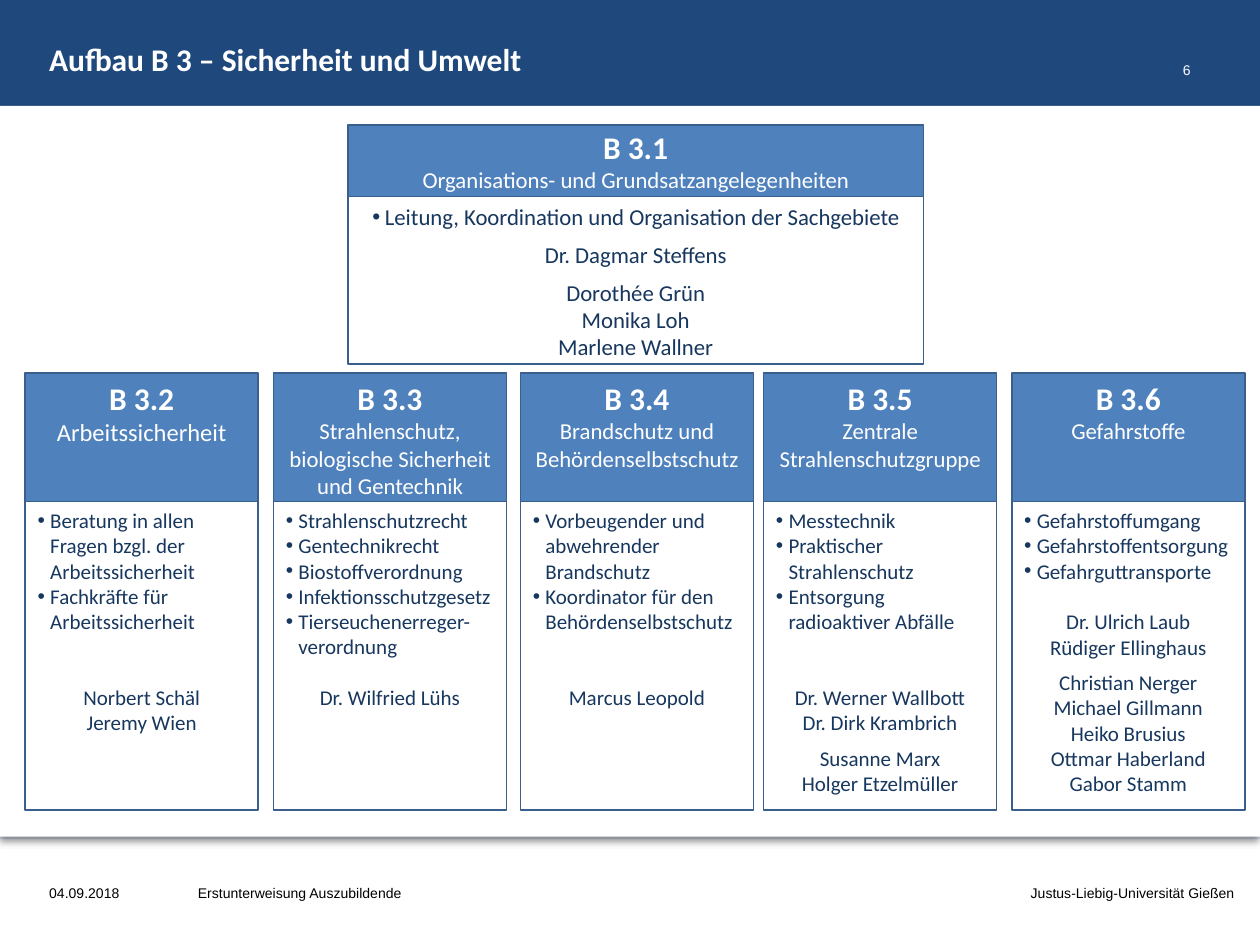
from dataclasses import dataclass

from lxml import etree
from pptx import Presentation
from pptx.dml.color import RGBColor
from pptx.enum.shapes import MSO_SHAPE
from pptx.enum.text import MSO_ANCHOR, MSO_AUTO_SIZE, PP_ALIGN
from pptx.oxml.ns import qn
from pptx.util import Inches, Pt

RECT = MSO_SHAPE.RECTANGLE
TOP, MIDDLE, BOTTOM = MSO_ANCHOR.TOP, MSO_ANCHOR.MIDDLE, MSO_ANCHOR.BOTTOM
LEFT, CENTER, RIGHT = PP_ALIGN.LEFT, PP_ALIGN.CENTER, PP_ALIGN.RIGHT

NAVY = RGBColor(0x1F, 0x49, 0x7D)
BLUE = RGBColor(0x4F, 0x81, 0xBD)
EDGE = RGBColor(0x3A, 0x5F, 0x8C)
PALE = RGBColor(0xDC, 0xE6, 0xF2)
INK = RGBColor(0x17, 0x37, 0x5E)
WHITE = RGBColor(0xFF, 0xFF, 0xFF)
BLACK = RGBColor(0, 0, 0)

ROW = 14.6  # height of one 12 pt text line, in points


@dataclass
class Unit:
    code: str
    name: str
    left: float
    tasks: list[str]
    teams: list[list[str]]
    gap: float
    head_size: int = 13
    size: int = 12
    top: float = 2.96
    width: float = 1.85
    head: float = 1.02
    body: float = 2.45
    anchor: MSO_ANCHOR = TOP
    align: PP_ALIGN = LEFT


UNITS = [
    Unit("B 3.6", "Gefahrstoffe", 8.03,
         ["Gefahrstoffumgang", "Gefahrstoffentsorgung", "Gefahrguttransporte"],
         [["Dr. Ulrich Laub", "Rüdiger Ellinghaus"],
          ["Christian Nerger", "Michael Gillmann", "Heiko Brusius",
           "Ottmar Haberland", "Gabor Stamm"]], ROW),
    Unit("B 3.5", "Zentrale Strahlenschutzgruppe", 6.06,
         ["Messtechnik", "Praktischer Strahlenschutz",
          "Entsorgung radioaktiver Abfälle"],
         [["Dr. Werner Wallbott", "Dr. Dirk Krambrich"],
          ["Susanne Marx", "Holger Etzelmüller"]], 2 * ROW),
    Unit("B 3.4", "Brandschutz und Behördenselbstschutz", 4.13,
         ["Vorbeugender und abwehrender Brandschutz",
          "Koordinator für den Behördenselbstschutz"],
         [["Marcus Leopold"]], 2 * ROW),
    Unit("B 3.3", "Strahlenschutz, biologische Sicherheit und Gentechnik", 2.17,
         ["Strahlenschutzrecht", "Gentechnikrecht", "Biostoffverordnung",
          "Infektionsschutzgesetz", "Tierseuchenerreger-verordnung"],
         [["Dr. Wilfried Lühs"]], ROW),
    Unit("B 3.2", "Arbeitssicherheit", 0.2,
         ["Beratung in allen Fragen bzgl. der Arbeitssicherheit",
          "Fachkräfte für Arbeitssicherheit"],
         [["Norbert Schäl", "Jeremy Wien"]], 2 * ROW, head_size=14),
    Unit("B 3.1", "Organisations- und Grundsatzangelegenheiten", 2.76,
         ["Leitung, Koordination und Organisation der Sachgebiete"],
         [["Dr. Dagmar Steffens"],
          ["Dorothée Grün", "Monika Loh", "Marlene Wallner"]], 6,
         size=13, top=0.99, width=4.57, head=0.57, body=1.33,
         anchor=MIDDLE, align=CENTER),
]


def place(shape, left: float, top: float, width: float, height: float) -> None:
    shape.left, shape.top = Inches(left), Inches(top)
    shape.width, shape.height = Inches(width), Inches(height)


def add_rect(slide, left: float, top: float, width: float, height: float,
             fill: RGBColor | None = None, line: RGBColor | None = None):
    box = slide.shapes.add_shape(RECT, Inches(left), Inches(top),
                                 Inches(width), Inches(height))
    box.shadow.inherit = False
    if fill is None:
        box.fill.background()
    else:
        box.fill.solid()
        box.fill.fore_color.rgb = fill
    if line is None:
        box.line.fill.background()
    else:
        box.line.color.rgb = line
        box.line.width = Pt(1)
    return box


def add_shadow(shape) -> None:
    """Cast a soft shadow straight down."""
    effects = shape._element.spPr.find(qn("a:effectLst"))
    cast = etree.SubElement(effects, qn("a:outerShdw"), blurRad=str(Pt(4)),
                            dist=str(Pt(3)), dir="5400000", rotWithShape="0")
    color = etree.SubElement(cast, qn("a:srgbClr"), val="000000")
    etree.SubElement(color, qn("a:alpha"), val="40000")


def add_run(para, text: str, size: int, color: RGBColor,
            bold: bool = False, face: str = "Calibri") -> None:
    run = para.add_run()
    run.text = text
    run.font.size, run.font.name = Pt(size), face
    run.font.color.rgb, run.font.bold = color, bold


def next_para(frame, align: PP_ALIGN):
    """Return the empty first paragraph, or a new one."""
    para = frame.paragraphs[0]
    if para.runs:
        para = frame.add_paragraph()
    para.alignment = align
    return para


def set_bullet(para) -> None:
    props = para._p.get_or_add_pPr()
    props.set("marL", str(Inches(0.1)))
    props.set("indent", str(Inches(-0.1)))
    etree.SubElement(props, qn("a:buFont"), typeface="Arial")
    etree.SubElement(props, qn("a:buChar"), char="•")


def set_frame(frame, anchor: MSO_ANCHOR, right: float = 0) -> None:
    frame.word_wrap, frame.auto_size = True, MSO_AUTO_SIZE.NONE
    frame.vertical_anchor = anchor
    frame.margin_left = frame.margin_top = frame.margin_bottom = 0
    frame.margin_right = Inches(right)


def add_label(slide, text: str, left: float, top: float, width: float,
              height: float, align: PP_ALIGN, color: RGBColor = BLACK,
              anchor: MSO_ANCHOR = MIDDLE, right: float = 0) -> None:
    box = slide.shapes.add_textbox(Inches(left), Inches(top),
                                   Inches(width), Inches(height))
    set_frame(box.text_frame, anchor, right)
    add_run(next_para(box.text_frame, align), text, 8, color, face="Arial")


def add_unit(slide, unit: Unit) -> None:
    head = add_rect(slide, unit.left, unit.top, unit.width, unit.head, BLUE, EDGE)
    frame = head.text_frame
    frame.word_wrap, frame.vertical_anchor = True, unit.anchor
    add_run(next_para(frame, CENTER), unit.code, 18, WHITE, True)
    add_run(next_para(frame, CENTER), unit.name, unit.head_size, WHITE)

    body = add_rect(slide, unit.left, unit.top + unit.head,
                    unit.width, unit.body, line=EDGE)
    frame = body.text_frame
    frame.word_wrap, frame.vertical_anchor = True, TOP
    for task in unit.tasks:
        para = next_para(frame, unit.align)
        set_bullet(para)
        add_run(para, task, unit.size, INK)
    gap = unit.gap
    for team in unit.teams:
        for pos, name in enumerate(team):
            para = next_para(frame, CENTER)
            if pos == 0:
                para.space_before = Pt(gap)
            add_run(para, name, unit.size, INK)
        gap = 6


def main() -> None:
    deck = Presentation()
    deck.slide_width, deck.slide_height = Inches(10), Inches(7.5)
    slide = deck.slides.add_slide(deck.slide_layouts[5])
    slide.background.fill.solid()
    slide.background.fill.fore_color.rgb = NAVY

    add_rect(slide, 0, 6.66, 10, 0.84, WHITE)
    add_rect(slide, 0, 0.86, 10, 5.8, PALE)
    add_shadow(add_rect(slide, 0, 0.84, 10, 5.8, WHITE))

    title = slide.shapes.title
    place(title, 0.39, 0, 8.43, 0.62)
    set_frame(title.text_frame, BOTTOM)
    add_run(next_para(title.text_frame, LEFT),
            "Aufbau B 3 – Sicherheit und Umwelt", 18, WHITE, True)

    add_label(slide, "6", 8.91, 0.39, 0.58, 0.23, RIGHT, WHITE, BOTTOM, 0.04)
    add_label(slide, "04.09.2018", 0.39, 6.89, 0.91, 0.4, LEFT)
    add_label(slide, "Erstunterweisung Auszubildende", 1.57, 6.89, 5.71, 0.4, LEFT)
    add_label(slide, "Justus-Liebig-Universität Gießen", 7.28, 6.89, 2.52, 0.4, RIGHT)

    for unit in UNITS:
        add_unit(slide, unit)
    deck.save("out.pptx")


if __name__ == "__main__":
    main()
